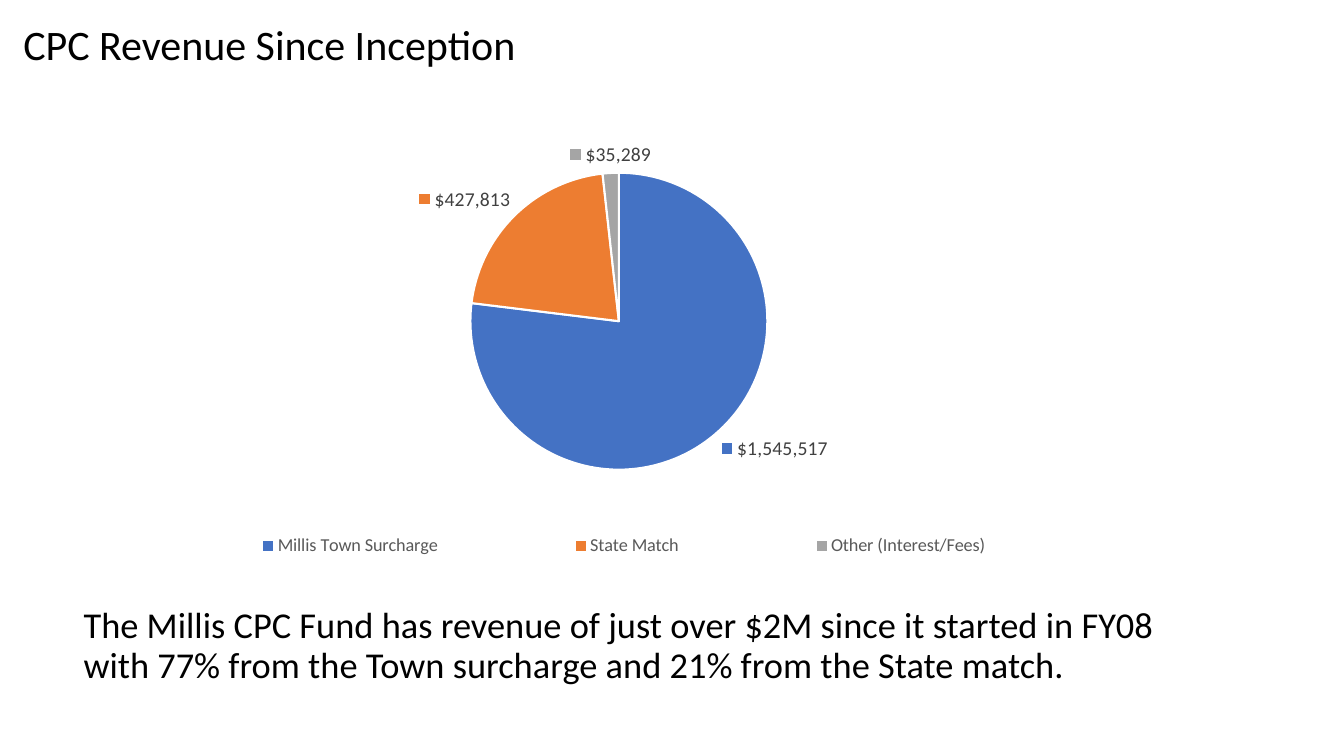
from lxml.etree import SubElement
from pptx import Presentation
from pptx.chart.data import CategoryChartData
from pptx.dml.color import RGBColor
from pptx.enum.chart import XL_CHART_TYPE, XL_LABEL_POSITION, XL_LEGEND_POSITION
from pptx.enum.text import MSO_ANCHOR, PP_ALIGN
from pptx.oxml.ns import qn
from pptx.util import Pt

FONT = "Calibri"
COLORS = {
    "text": "000000",
    "label": "404040",
    "legend": "595959",
    "edge": "FFFFFF",
    "Millis Town Surcharge": "4472C4",
    "State Match": "ED7D31",
    "Other (Interest/Fees)": "A5A5A5",
}
REVENUE = {
    "Millis Town Surcharge": 1545517,
    "State Match": 427813,
    "Other (Interest/Fees)": 35289,
}
DOLLARS = '"$"#,##0'


def rgb(name):
    return RGBColor.from_string(COLORS[name])


def write(sp, text, size=26, color="text", spacing=0.9):
    tf = sp.text_frame
    tf.word_wrap = True
    tf.vertical_anchor = MSO_ANCHOR.MIDDLE
    p = tf.paragraphs[0]
    p.alignment = PP_ALIGN.LEFT
    p.line_spacing = spacing
    r = p.add_run()
    r.text = text
    r.font.name = FONT
    r.font.size = Pt(size)
    r.font.color.rgb = rgb(color)


prs = Presentation()
prs.slide_width, prs.slide_height = Pt(960), Pt(540)
s = prs.slides.add_slide(prs.slide_layouts[5])

title = s.shapes.title
title.left, title.top, title.width, title.height = Pt(9.4), Pt(-21), Pt(828), Pt(109)
write(title, "CPC Revenue Since Inception", size=30)

summary = s.shapes.add_textbox(Pt(52.6), Pt(407.5), Pt(828), Pt(109))
write(summary, "The Millis CPC Fund has revenue of just over $2M since it started in FY08 "
               "with 77% from the Town surcharge and 21% from the State match.")

data = CategoryChartData(number_format=DOLLARS)
data.categories = list(REVENUE)
data.add_series("Series 1", list(REVENUE.values()))
chart = s.shapes.add_chart(XL_CHART_TYPE.PIE, Pt(79.2), Pt(-21), Pt(725.8), Pt(451.4), data).chart
chart.has_title = False
chart.font.name = FONT
chart.font.size = Pt(10)
chart.font.color.rgb = rgb("text")

plot = chart.plots[0]
plot.vary_by_categories = True
for i, name in enumerate(REVENUE):
    fmt = plot.series[0].points[i].format
    fmt.fill.solid()
    fmt.fill.fore_color.rgb = rgb(name)
    fmt.line.color.rgb = rgb("edge")
    fmt.line.width = Pt(1.5)

labels = plot.series[0].data_labels
labels.show_value = True
labels.show_legend_key = True
labels.show_percentage = False
labels.position = XL_LABEL_POSITION.OUTSIDE_END
labels.number_format = DOLLARS
labels.number_format_is_linked = False

chart.has_legend = True
legend = chart.legend
legend.position = XL_LEGEND_POSITION.BOTTOM
legend.include_in_layout = False
for part, size, color in ((labels, 14, "label"), (legend, 13, "legend")):
    part.font.name = FONT
    part.font.size = Pt(size)
    part.font.color.rgb = rgb(color)

plot_area = chart._chartSpace.chart.plotArea
legend_xml = legend._element
for old in plot_area.findall(qn("c:layout")) + legend_xml.findall(qn("c:layout")):
    old.getparent().remove(old)
layouts = (
    (plot_area, 0, "inner", (0.09, 0.32, 0.82, 0.47)),
    (legend_xml, 1, None, (0.02, 0.88, 0.97, 0.06)),
)
for parent, index, target, box in layouts:
    layout = SubElement(parent, qn("c:layout"))
    parent.insert(index, layout)
    manual = SubElement(layout, qn("c:manualLayout"))
    if target:
        SubElement(manual, qn("c:layoutTarget")).set("val", target)
    for tag in ("xMode", "yMode"):
        SubElement(manual, qn(f"c:{tag}")).set("val", "edge")
    for tag, value in zip("xywh", box):
        SubElement(manual, qn(f"c:{tag}")).set("val", str(value))

prs.save("out.pptx")
